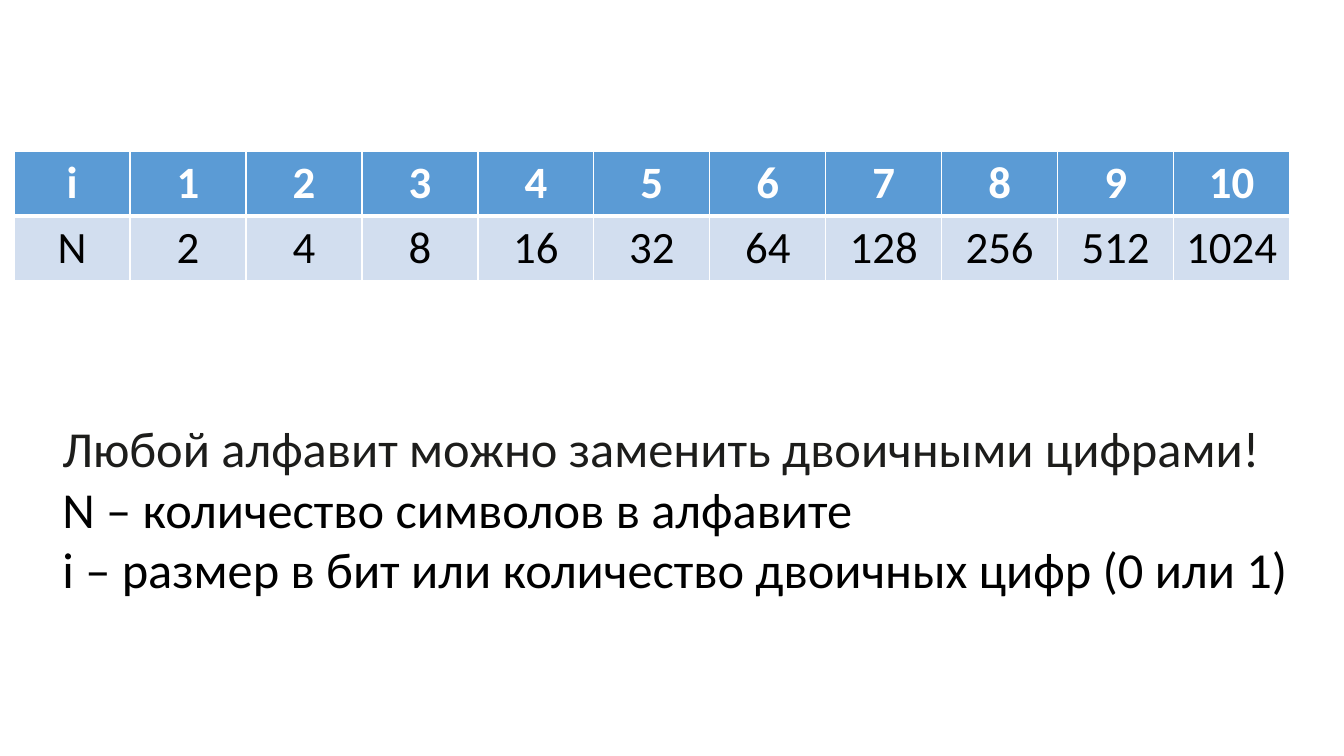
from lxml import etree
from pptx import Presentation
from pptx.dml.color import RGBColor
from pptx.enum.text import MSO_ANCHOR, MSO_AUTO_SIZE, PP_ALIGN
from pptx.oxml.ns import qn
from pptx.util import Inches, Pt

CENTER = PP_ALIGN.CENTER
TOP = MSO_ANCHOR.TOP
GROW = MSO_AUTO_SIZE.SHAPE_TO_FIT_TEXT
FONT = "Calibri"
COLORS = {
    "header": "5B9BD5",
    "body": "D2DEEF",
    "white": "FFFFFF",
    "black": "000000",
    "dark": "1D1D1B",
}
COL_W, ROW_H = Inches(1.15), Inches(0.635)
MAX_BITS = 10


def rgb(name):
    return RGBColor.from_string(COLORS[name])


def set_font(p, size, color, bold=False):
    p.font.name = FONT
    p.font.size = Pt(size)
    p.font.bold = bold
    p.font.color.rgb = rgb(color)


def set_borders(cell, widths):
    tc_pr = cell._tc.get_or_add_tcPr()
    for i, (side, width) in enumerate(widths.items()):
        ln = etree.Element(qn(f"a:ln{side}"), w=str(Pt(width)))
        fill = etree.SubElement(ln, qn("a:solidFill"))
        etree.SubElement(fill, qn("a:srgbClr"), val=COLORS["white"])
        tc_pr.insert(i, ln)


def fill_cell(cell, text, fill, color, bold, borders):
    cell.text = text
    cell.vertical_anchor = TOP
    cell.fill.solid()
    cell.fill.fore_color.rgb = rgb(fill)
    p = cell.text_frame.paragraphs[0]
    p.alignment = CENTER
    set_font(p, 32, color, bold)
    set_borders(cell, borders)


def add_powers_table(s, left, top):
    bits = range(1, MAX_BITS + 1)
    rows = [
        (["i", *bits], "header", "white", True, {"L": 1, "R": 1, "T": 1, "B": 3}),
        (["N", *(2 ** i for i in bits)], "body", "black", False,
         {"L": 1, "R": 1, "T": 3, "B": 1}),
    ]
    cols = MAX_BITS + 1
    table = s.shapes.add_table(len(rows), cols, left, top,
                               COL_W * cols, ROW_H * len(rows)).table
    for col in table.columns:
        col.width = COL_W
    for r, (values, *style) in enumerate(rows):
        table.rows[r].height = ROW_H
        for c, value in enumerate(values):
            fill_cell(table.cell(r, c), str(value), *style)


def add_text(s, left, top, width, height, lines):
    tf = s.shapes.add_textbox(left, top, width, height).text_frame
    tf.word_wrap = False
    tf.auto_size = GROW
    for i, (text, color) in enumerate(lines):
        p = tf.add_paragraph() if i else tf.paragraphs[0]
        p.text = text
        set_font(p, 36, color)


def main():
    prs = Presentation()
    prs.slide_width, prs.slide_height = Inches(13.33), Inches(7.5)
    s = prs.slides.add_slide(prs.slide_layouts[6])
    add_powers_table(s, Inches(0.14), Inches(1.5))
    add_text(s, Inches(0.52), Inches(4.09), Inches(12.73), Inches(1.92), [
        ("Любой алфавит можно заменить двоичными цифрами!", "dark"),
        ("N – количество символов в алфавите", "black"),
        ("i – размер в бит или количество двоичных цифр (0 или 1)", "black"),
    ])
    prs.save("out.pptx")


if __name__ == "__main__":
    main()
